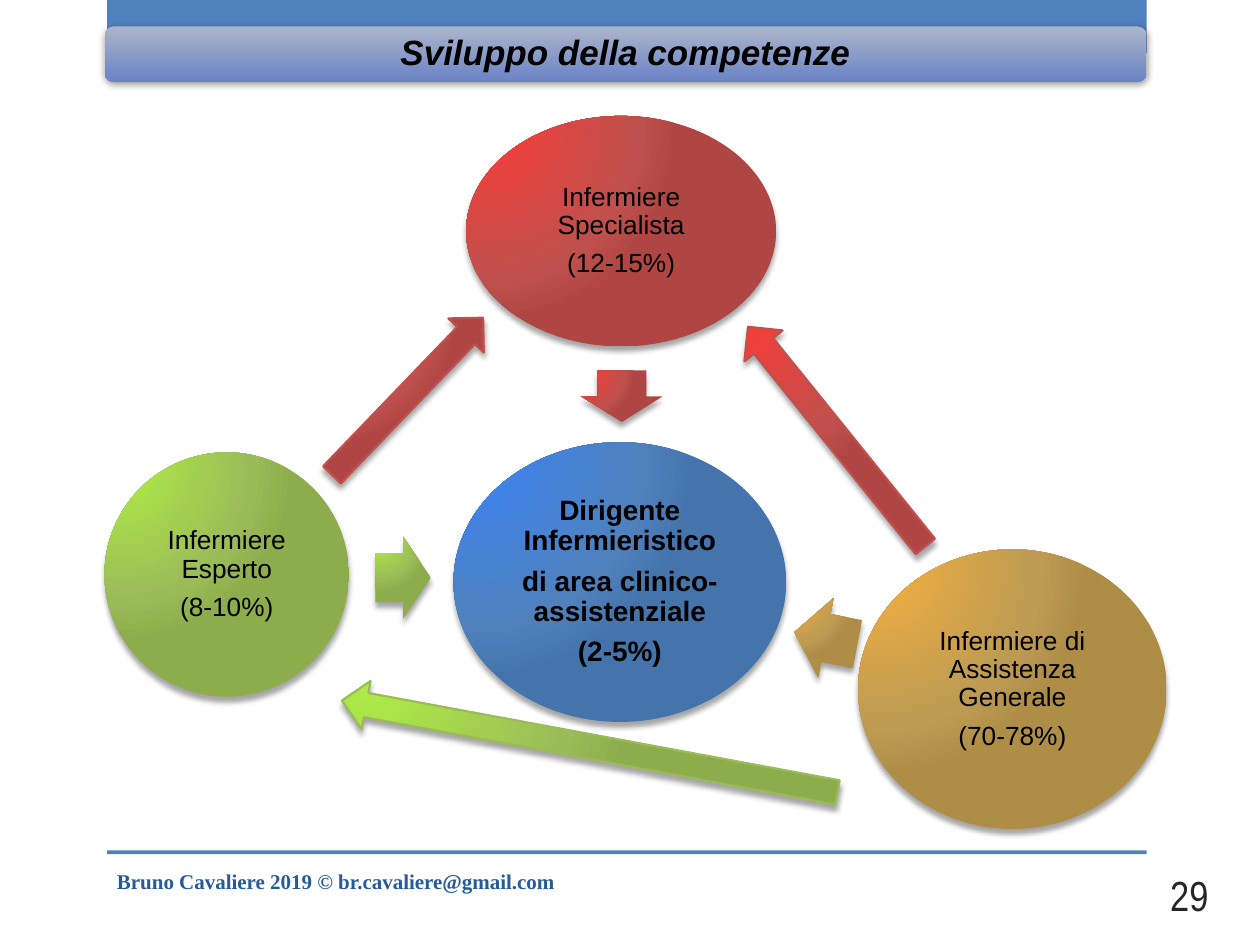
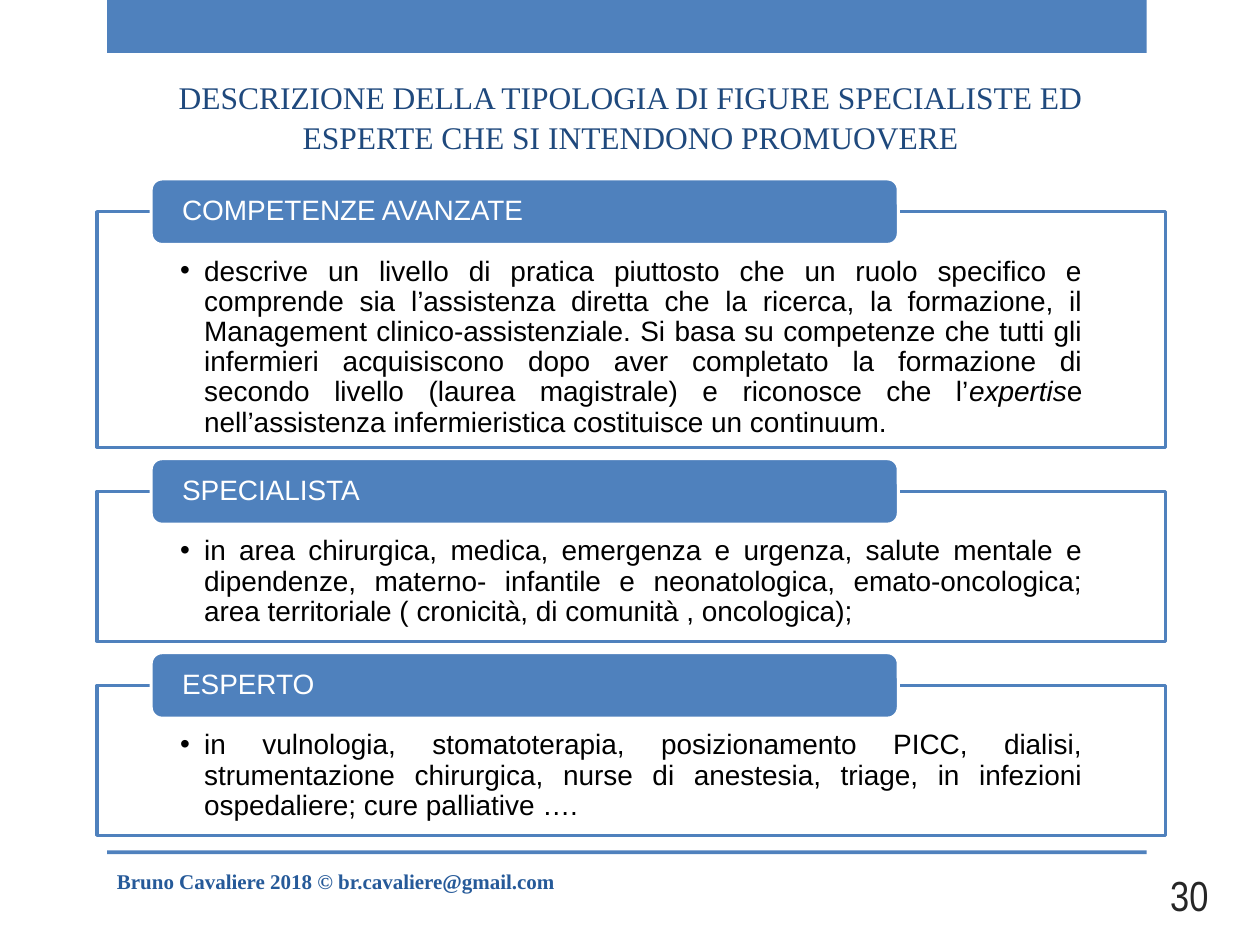
"""Builds two slides on the development of nursing competences."""
from lxml import etree
from pptx import Presentation
from pptx import util as u
from pptx.dml.color import RGBColor
from pptx.enum import shapes, text
from pptx.oxml import ns, parse_xml

BLUE, WHITE, BLACK = "4F81BD", "FFFFFF", "000000"
RED_GLOW = ("F63D39", "C0504D", "AF4643")
GREEN_GLOW = ("AEEB46", "9BBB59", "8DAD4C")
BLUE_GLOW = ("3D83F1", "4F81BD", "4574AC")
GOLD_GLOW = ("F1AE40", "BD9B53", "AE8D47")
RADIAL = ('<a:path path="circle"><a:fillToRect l="15000" t="15000" '
          'r="100000" b="100000"/></a:path>')
LINEAR = '<a:lin ang="5400000" scaled="0"/>'
RECT, ROUND = shapes.MSO_SHAPE.RECTANGLE, shapes.MSO_SHAPE.ROUNDED_RECTANGLE
OVAL, ARROW = shapes.MSO_SHAPE.OVAL, shapes.MSO_SHAPE.RIGHT_ARROW
LEFT, CENTER, RIGHT, JUSTIFY = (text.PP_ALIGN.LEFT, text.PP_ALIGN.CENTER,
                                text.PP_ALIGN.RIGHT, text.PP_ALIGN.JUSTIFY)
TOP, MIDDLE = text.MSO_ANCHOR.TOP, text.MSO_ANCHOR.MIDDLE


def paint(fill, colour):
    fill.solid()
    fill.fore_color.rgb = RGBColor.from_string(colour)


def place(slide, kind, box, words=(), fill=None, line=None, width=1.25, turn=0,
          shadow=None, size=16, font="Arial", colour=BLACK, bold=False,
          italic=False, align=CENTER, anchor=MIDDLE, spacing=0.9,
          insets=(0.02, 0.02, 0.02, 0.02), bullet=False):
    """Add a shape, or a text box if kind is None; underscores toggle italics."""
    frame = [u.Inches(length) for length in box]
    if kind is None:
        part = slide.shapes.add_textbox(*frame)
    else:
        part = slide.shapes.add_shape(kind, *frame)
        part.shadow.inherit = False
        part.rotation = turn
        properties = part._element.spPr
        if isinstance(fill, tuple):
            part.fill.gradient()
            positions = (0, 76, 100) if len(fill) == 3 else (0, 100)
            stops = "".join(
                f'<a:gs pos="{at * 1000}"><a:srgbClr val="{tone}"/></a:gs>'
                for at, tone in zip(positions, fill))
            properties.replace(properties.find(ns.qn("a:gradFill")), parse_xml(
                f'<a:gradFill {ns.nsdecls("a")} rotWithShape="1"><a:gsLst>{stops}'
                f'</a:gsLst>{RADIAL if len(fill) == 3 else LINEAR}</a:gradFill>'))
        else:
            paint(part.fill, fill)
        if line:
            paint(part.line.fill, line)
            part.line.width = u.Pt(width)
        else:
            part.line.fill.background()
        if shadow:
            alpha, blur, distance, angle = shadow
            properties.find(ns.qn("a:effectLst")).append(parse_xml(
                f'<a:outerShdw {ns.nsdecls("a")} blurRad="{u.Pt(blur)}" '
                f'dist="{u.Pt(distance)}" dir="{angle * 60000}" rotWithShape="0">'
                f'<a:srgbClr val="{BLACK}"><a:alpha val="{alpha * 1000}"/>'
                '</a:srgbClr></a:outerShdw>'))
    body = part.text_frame
    body.word_wrap = True
    body.vertical_anchor = anchor
    body.margin_left, body.margin_top, body.margin_right, body.margin_bottom = [
        u.Inches(inset) for inset in insets]
    for index, sentence in enumerate(words):
        paragraph = body.add_paragraph() if index else body.paragraphs[0]
        paragraph.alignment = align
        paragraph.line_spacing = spacing
        if index < len(words) - 1:
            paragraph.space_after = u.Pt(size * 0.37)
        if bullet:
            indents = paragraph._p.get_or_add_pPr()
            indents.set("marL", str(u.Inches(0.19)))
            indents.set("indent", str(-u.Inches(0.19)))
            etree.SubElement(indents, ns.qn("a:buFont")).set("typeface", "Arial")
            etree.SubElement(indents, ns.qn("a:buChar")).set("char", "•")
        for turn_index, piece in enumerate(sentence.split("_")):
            run = paragraph.add_run()
            run.text = piece
            run.font.name, run.font.size, run.font.bold = font, u.Pt(size), bold
            run.font.italic = italic or turn_index % 2 == 1
            paint(run.font.fill, colour)
    return part


deck = Presentation()
deck.slide_width, deck.slide_height = u.Inches(10), u.Inches(7.5)
roles, profiles = [deck.slides.add_slide(deck.slide_layouts[6]) for _ in range(2)]

for slide, number, year in ((roles, 29, 2019), (profiles, 30, 2018)):
    for top, height in ((0, 0.42), (6.75, 0.03)):
        place(slide, RECT, (0.85, top, 8.25, height), fill=BLUE)
    place(slide, None, (8.86, 6.9, 0.83, 0.4), [str(number)], size=24,
          font="Arial Narrow", colour="262626", align=RIGHT, spacing=1,
          insets=(0.1, 0.05, 0.1, 0.05))
    place(slide, None, (0.83, 6.79, 5.33, 0.4),
          [f"Bruno Cavaliere {year} © br.cavaliere@gmail.com"], size=12,
          font="Times New Roman", colour="265A99", bold=True, align=LEFT,
          spacing=1, insets=(0.1, 0.05, 0.1, 0.05))

soft = (35, 3, 3, 90)
place(roles, ROUND, (0.83, 0.21, 8.27, 0.44), ["Sviluppo della competenze"],
      fill=("ADB5CC", "6A83C5"), shadow=(40, 4, 1, 88), size=20, bold=True,
      italic=True, insets=(0.08, 0, 0.08, 0))

for box, glow, size, words in (
    ((3.6, 3.51, 2.64, 2.22), BLUE_GLOW, 16,
     ["Dirigente Infermieristico", "di area clinico-assistenziale", "(2-5%)"]),
    ((3.7, 0.92, 2.46, 1.83), RED_GLOW, 15,
     ["Infermiere Specialista", "(12-15%)"]),
    ((6.81, 4.36, 2.45, 2.22), GOLD_GLOW, 15,
     ["Infermiere di Assistenza Generale", "(70-78%)"]),
    ((0.83, 3.59, 1.94, 1.94), GREEN_GLOW, 15,
     ["Infermiere Esperto", "(8-10%)"]),
):
    place(roles, OVAL, box, words, fill=glow, shadow=soft, size=size,
          bold=glow == BLUE_GLOW)

for box, turn, glow in (
    ((4.73, 2.82, 0.41, 0.65), 90.2, RED_GLOW),
    ((6.3, 4.74, 0.51, 0.65), 190.8, GOLD_GLOW),
    ((2.98, 4.26, 0.44, 0.65), 0.1, GREEN_GLOW),
):
    inward = place(roles, ARROW, box, fill=glow, turn=turn, shadow=soft)
    inward.adjustments[0], inward.adjustments[1] = 0.6, 0.5

for box, turn, glow in (
    ((5.52, 3.27, 2.24, 0.39), 231.1, RED_GLOW),
    ((2.37, 2.95, 1.73, 0.39), 313.9, RED_GLOW),
    ((2.68, 5.73, 4, 0.39), 190.5, GREEN_GLOW),
):
    place(roles, ARROW, box, fill=glow, line=glow[1], turn=turn, shadow=soft)

place(profiles, None, (0.91, 0.57, 8.19, 0.7),
      ["DESCRIZIONE DELLA TIPOLOGIA DI FIGURE SPECIALISTE ED "
       "ESPERTE CHE SI INTENDONO PROMUOVERE"],
      size=18, font="Times New Roman", colour="1F497D", spacing=1.05,
      insets=(0.1, 0.05, 0.1, 0.05))

top = 1.68
for heading, height, description in (
    ("COMPETENZE AVANZATE", 1.87,
     "descrive un livello di pratica piuttosto che un ruolo specifico e comprende "
     "sia l’assistenza diretta che la ricerca, la formazione, il Management "
     "clinico-assistenziale. Si basa su competenze che tutti gli infermieri "
     "acquisiscono dopo aver completato la formazione di secondo livello (laurea "
     "magistrale) e riconosce che l’_expertis_e nell’assistenza infermieristica "
     "costituisce un continuum."),
    ("SPECIALISTA", 1.19,
     "in area chirurgica, medica, emergenza e urgenza, salute mentale e "
     "dipendenze, materno- infantile e neonatologica, emato-oncologica; area "
     "territoriale ( cronicità, di comunità , oncologica);"),
    ("ESPERTO", 1.19,
     "in vulnologia, stomatoterapia, posizionamento PICC, dialisi, strumentazione "
     "chirurgica, nurse di anestesia, triage, in infezioni ospedaliere; cure "
     "palliative …."),
):
    place(profiles, RECT, (0.77, top, 8.48, height), [description], fill=WHITE,
          line=BLUE, width=1.75, align=JUSTIFY, anchor=TOP, bullet=True,
          insets=(0.66, 0.36, 0.66, 0.12))
    place(profiles, ROUND, (1.2, top - 0.26, 5.93, 0.52), [heading], fill=BLUE,
          line=WHITE, width=1.75, colour=WHITE, align=LEFT,
          insets=(0.22, 0, 0.22, 0))
    top += height + 0.35

deck.save("out.pptx")
